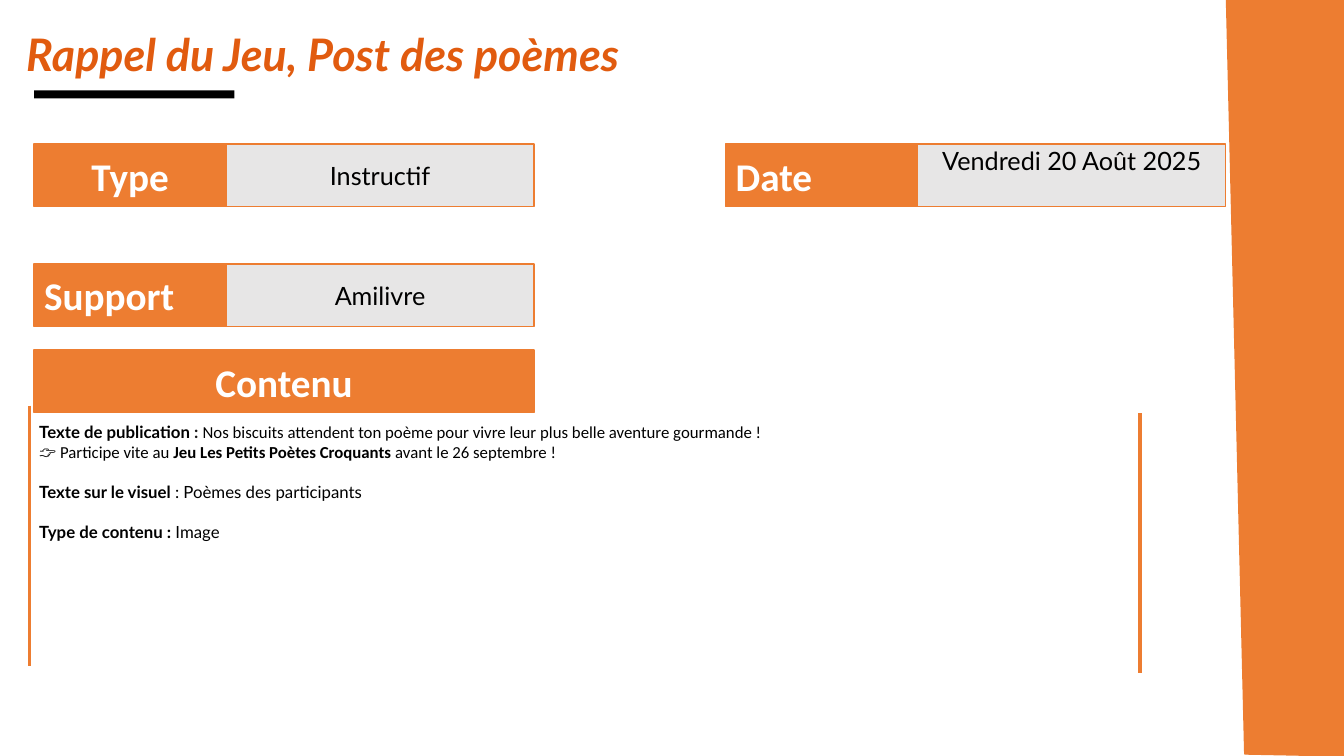
from lxml import etree
from pptx import Presentation
from pptx import util as u
from pptx.dml.color import RGBColor
from pptx.enum import shapes, text
from pptx.oxml.ns import qn

COLORS = {
    "orange": "ED7D31",
    "title": "E15B0F",
    "grey": "E7E6E6",
    "black": "000000",
    "ink": "181717",
    "white": "FFFFFF",
}
LEFT, CENTER = text.PP_ALIGN.LEFT, text.PP_ALIGN.CENTER
MIDDLE, TOP = text.MSO_ANCHOR.MIDDLE, text.MSO_ANCHOR.TOP


def rgb(name):
    return RGBColor.from_string(COLORS[name])


class SlideBuilder:
    label_width, value_width, row_height = 4.84, 7.76, 1.58

    def __init__(self, slide):
        self.slide = slide

    def format_run(self, run, size, font, color, bold=False, italic=False):
        run.font.size = u.Pt(size)
        run.font.name = font
        run.font.color.rgb = rgb(color)
        run.font.bold = bold
        run.font.italic = italic

    def paint(self, shape, fill, line=None):
        shape.shadow.inherit = False
        shape.fill.solid()
        shape.fill.fore_color.rgb = rgb(fill)
        if line:
            shape.line.color.rgb = rgb(line)
            shape.line.width = u.Pt(1)
        else:
            shape.line.fill.background()

    def rectangle(self, left, top, width, height, fill, line=None):
        shape = self.slide.shapes.add_shape(
            shapes.MSO_SHAPE.RECTANGLE, u.Cm(left), u.Cm(top), u.Cm(width), u.Cm(height))
        self.paint(shape, fill, line)
        return shape

    def polygon(self, points, fill):
        start, *others = [(u.Cm(x), u.Cm(y)) for x, y in points]
        builder = self.slide.shapes.build_freeform(*start)
        builder.add_line_segments(others, close=True)
        self.paint(builder.convert_to_shape(), fill, fill)

    def cell(self, left, top, width, fill, wording, align, anchor, **style):
        shape = self.rectangle(left, top, width, self.row_height, fill, "orange")
        frame = shape.text_frame
        frame.text = wording
        frame.word_wrap = True
        frame.vertical_anchor = anchor
        if anchor == TOP:
            frame.margin_top = u.Cm(0.02)
        paragraph = frame.paragraphs[0]
        paragraph.alignment = align
        self.format_run(paragraph.runs[0], **style)

    def label(self, left, top, wording, align=LEFT, width=label_width):
        self.cell(left, top, width, "orange", wording, align, MIDDLE,
                  size=28, font="Calibri", color="white", bold=True)

    def field(self, left, top, name, value, align=LEFT, anchor=MIDDLE):
        """Draw an orange label with its grey value on the right."""
        self.label(left, top, name, align)
        self.cell(left + self.label_width, top, self.value_width, "grey", value,
                  CENTER, anchor, size=18, font="Lato", color="black")

    def vertical_line(self, x, top, bottom):
        line = self.slide.shapes.add_connector(
            shapes.MSO_CONNECTOR.STRAIGHT, u.Cm(x), u.Cm(top), u.Cm(x), u.Cm(bottom))
        line.line.color.rgb = rgb("orange")
        line.line.width = u.Pt(2.25)
        etree.SubElement(line._element.spPr, qn("a:effectLst"))

    def text_box(self, left, top, width, height):
        box = self.slide.shapes.add_textbox(
            u.Cm(left), u.Cm(top), u.Cm(width), u.Cm(height))
        box.text_frame.word_wrap = True
        return box.text_frame

    def title(self, wording):
        frame = self.text_box(0.41, 0.56, 28.02, 1.32)
        frame.text = wording
        paragraph = frame.paragraphs[0]
        paragraph.alignment = text.PP_ALIGN.JUSTIFY
        self.format_run(paragraph.runs[0], 32, "Lato", "title", bold=True, italic=True)

    def content(self, paragraphs):
        """Write paragraphs of lines, each line a list of (wording, font, color, bold)."""
        frame = self.text_box(0.74, 10.49, 27.05, 3.84)
        for number, lines in enumerate(paragraphs):
            paragraph = frame.add_paragraph() if number else frame.paragraphs[0]
            if number:
                paragraph.space_before = u.Pt(14.4)
            for index, runs in enumerate(lines):
                if index:
                    paragraph.add_line_break()
                for wording, font, color, bold in runs:
                    run = paragraph.add_run()
                    run.text = wording
                    self.format_run(run, 12, font, color, bold)


def main():
    presentation = Presentation()
    presentation.slide_width = u.Cm(33.87)
    presentation.slide_height = u.Cm(19.05)
    builder = SlideBuilder(presentation.slides.add_slide(presentation.slide_layouts[6]))

    builder.polygon([(30.91, 0), (33.87, 0), (33.87, 19.05), (31.37, 19)], "orange")
    builder.rectangle(0.86, 2.28, 5.05, 0.2, "black")

    builder.field(0.86, 3.63, "Type", "Instructif", align=CENTER)
    builder.field(18.29, 3.63, "Date", "Vendredi 20 Août 2025", anchor=TOP)
    builder.field(0.86, 6.65, "Support", "Amilivre")

    builder.vertical_line(0.74, 10.22, 16.78)
    builder.label(0.86, 8.82, "Contenu", CENTER,
                  width=builder.label_width + builder.value_width)
    builder.vertical_line(28.73, 10.41, 16.97)

    builder.content([
        [
            [("Texte de publication ", "Lato", "black", True),
             (": ", "Lato", "ink", True),
             ("Nos biscuits attendent ton poème pour vivre leur plus belle "
              "aventure gourmande !", "Calibri", "black", False)],
            [("👉 Participe vite au ", "Calibri", "black", False),
             ("Jeu Les Petits Poètes Croquants", "Calibri", "black", True),
             (" avant le 26 septembre !", "Calibri", "black", False)],
        ],
        [[("Texte sur le visuel ", "Lato", "black", True),
          (": Poèmes des participants", "Lato", "black", False)]],
        [[("Type de contenu : ", "Lato", "black", True),
          ("Image", "Lato", "black", False)]],
    ])
    builder.title("Rappel du Jeu, Post des poèmes")

    presentation.save("out.pptx")


if __name__ == "__main__":
    main()
